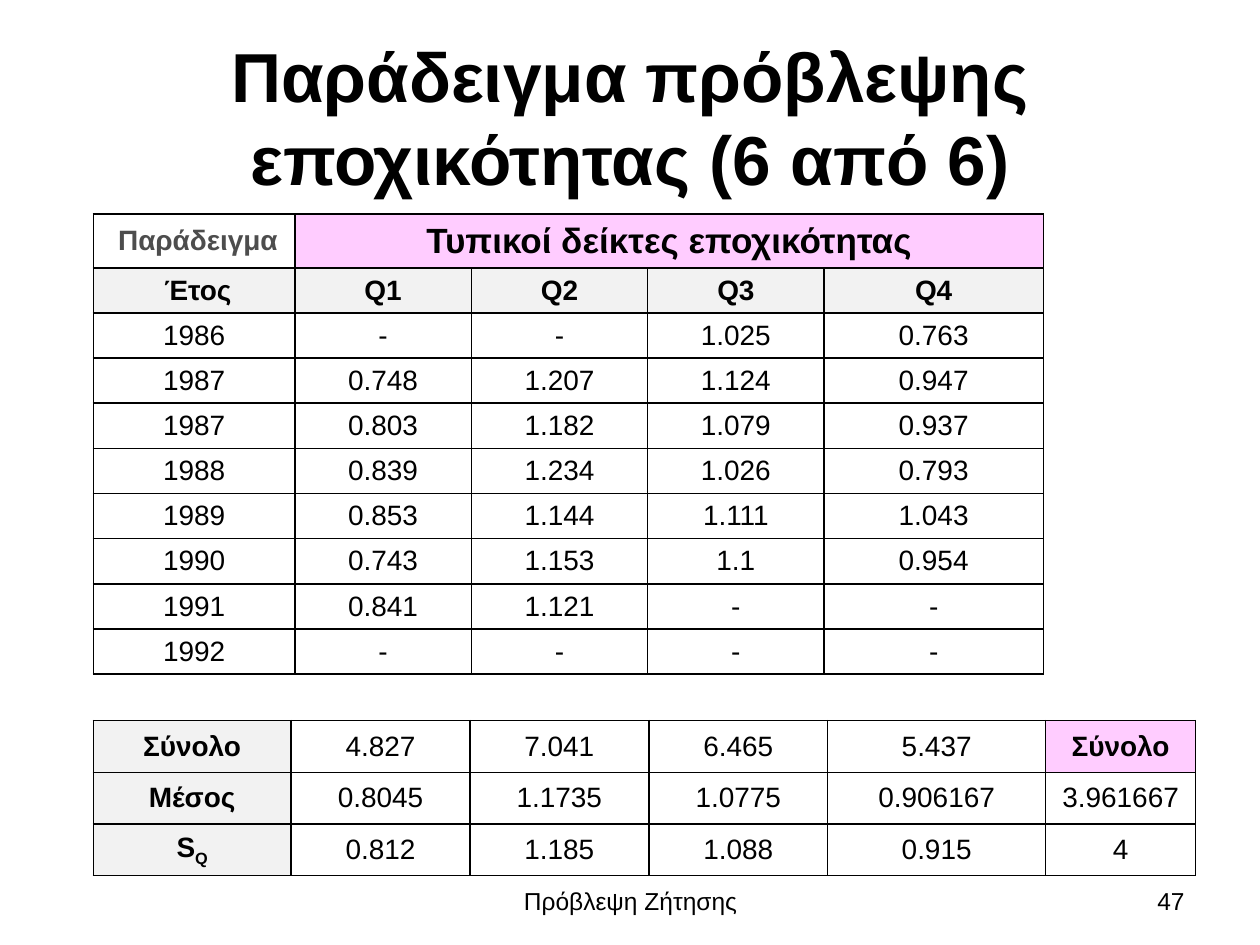
from dataclasses import dataclass

import pptx
import pptx.dml.color
import pptx.enum.text
import pptx.oxml
import pptx.oxml.ns
import pptx.util
from pptx.util import Inches

Align = pptx.enum.text.PP_ALIGN
Middle = pptx.enum.text.MSO_ANCHOR.MIDDLE


@dataclass(frozen=True)
class Theme:
    font: str = "Arial"
    ink: str = "000000"
    muted: str = "4D4D4D"
    white: str = "FFFFFF"
    label: str = "F2F2F2"
    accent: str = "FFCCFF"
    title: float = 39.6
    heading: float = 20
    body: float = 16
    footer: float = 14


THEME = Theme()


@dataclass(frozen=True)
class Cell:
    text: str
    fill: str = ""
    bold: bool = False
    size: float = THEME.body
    color: str = THEME.ink
    subscript: str = ""


@dataclass(frozen=True)
class Grid:
    left: float
    top: float
    columns: list[float]
    heights: list[float]
    rows: list[list[Cell]]


@dataclass(frozen=True)
class Label:
    text: str
    box: tuple[float, float, float, float]
    size: float
    align: Align
    bold: bool = False


def style(font, size: float, bold: bool, color: str) -> None:
    font.name, font.size, font.bold = THEME.font, pptx.util.Pt(size), bold
    font.color.rgb = pptx.dml.color.RGBColor.from_string(color)


def draw_label(slide, label: Label) -> None:
    frame = slide.shapes.add_textbox(*map(Inches, label.box)).text_frame
    frame.word_wrap = True
    frame.vertical_anchor = Middle
    paragraph = frame.paragraphs[0]
    paragraph.text = label.text
    paragraph.alignment = label.align
    style(paragraph.font, label.size, label.bold, THEME.ink)


def add_borders(cell) -> None:
    properties = cell._tc.get_or_add_tcPr()
    for position, side in enumerate(("lnL", "lnR", "lnT", "lnB")):
        properties.insert(position, pptx.oxml.parse_xml(
            f'<a:{side} {pptx.oxml.ns.nsdecls("a")} w="12700"><a:solidFill>'
            f'<a:srgbClr val="{THEME.ink}"/></a:solidFill></a:{side}>'))


def draw_cell(cell, content: Cell) -> None:
    cell.vertical_anchor = Middle
    cell.margin_left = cell.margin_right = Inches(0.09)
    cell.margin_top = cell.margin_bottom = Inches(0.046)
    if content.fill:
        cell.fill.solid()
        cell.fill.fore_color.rgb = pptx.dml.color.RGBColor.from_string(content.fill)
    else:
        cell.fill.background()
    add_borders(cell)

    paragraph = cell.text_frame.paragraphs[0]
    paragraph.alignment = Align.CENTER
    hanging = Inches(0.38)
    indents = paragraph._p.get_or_add_pPr()
    indents.set("marL", str(hanging))
    indents.set("indent", str(-hanging))
    style(paragraph.font, content.size, content.bold, content.color)
    paragraph.add_run().text = content.text
    if content.subscript:
        lowered = paragraph.add_run()
        lowered.text = content.subscript
        lowered.font._element.set("baseline", "-25000")


def draw_grid(slide, grid: Grid):
    table = slide.shapes.add_table(
        len(grid.rows), len(grid.columns), Inches(grid.left), Inches(grid.top),
        Inches(sum(grid.columns)), Inches(sum(grid.heights))).table
    table.first_row = table.horz_banding = False
    for column, width in zip(table.columns, grid.columns):
        column.width = Inches(width)
    for row, height, contents in zip(table.rows, grid.heights, grid.rows):
        row.height = Inches(height)
        for cell, content in zip(row.cells, contents):
            draw_cell(cell, content)
    return table


def label_cell(text: str, subscript: str = "") -> Cell:
    return Cell(text, THEME.label, True, subscript=subscript)


def value_cells(values: str) -> list[Cell]:
    return [Cell(value) for value in values.split()]


# Seasonal indices by year and quarter
YEARS = [
    "1986 - - 1.025 0.763",
    "1987 0.748 1.207 1.124 0.947",
    "1987 0.803 1.182 1.079 0.937",
    "1988 0.839 1.234 1.026 0.793",
    "1989 0.853 1.144 1.111 1.043",
    "1990 0.743 1.153 1.1 0.954",
    "1991 0.841 1.121 - -",
    "1992 - - - -",
]
INDICES = Grid(
    0.74, 1.7, [1.6, 1.4, 1.4, 1.4, 1.74], [0.4] + [0.33] * (len(YEARS) + 1),
    [
        [Cell(" Παράδειγμα", THEME.white, True, color=THEME.muted),
         Cell("Τυπικοί δείκτες εποχικότητας", THEME.accent, True, THEME.heading)]
        + [Cell("", THEME.accent)] * 3,
        [label_cell(name) for name in (" Έτος", "Q1", "Q2", "Q3", "Q4")],
        *map(value_cells, YEARS),
    ])

# Totals, means and normalised indices
SUMMARY = Grid(
    0.74, 5.72, [1.57, 1.42, 1.42, 1.42, 1.73, 1.19], [0.41] * 3,
    [
        [label_cell("Σύνολο"), *value_cells("4.827 7.041 6.465 5.437"),
         Cell("Σύνολο", THEME.accent, True)],
        [label_cell("Μέσος"), *value_cells("0.8045 1.1735 1.0775 0.906167 3.961667")],
        [label_cell("S", "Q"), *value_cells("0.812 1.185 1.088 0.915 4")],
    ])

# Title and footer
LABELS = [
    Label("Παράδειγμα πρόβλεψης εποχικότητας (6 από 6)", (0.5, 0.3, 9, 1.25),
          THEME.title, Align.CENTER, True),
    Label("Πρόβλεψη Ζήτησης", (3.42, 6.95, 3.17, 0.4), THEME.footer, Align.CENTER),
    Label("47", (7.17, 6.95, 2.33, 0.4), THEME.footer, Align.RIGHT),
]


def main() -> None:
    deck = pptx.Presentation()
    deck.slide_width, deck.slide_height = Inches(10), Inches(7.5)
    slide = deck.slides.add_slide(deck.slide_layouts[6])

    for label in LABELS:
        draw_label(slide, label)
    indices = draw_grid(slide, INDICES)
    indices.cell(0, 1).merge(indices.cell(0, 4))
    draw_grid(slide, SUMMARY)

    deck.save("out.pptx")


if __name__ == "__main__":
    main()
